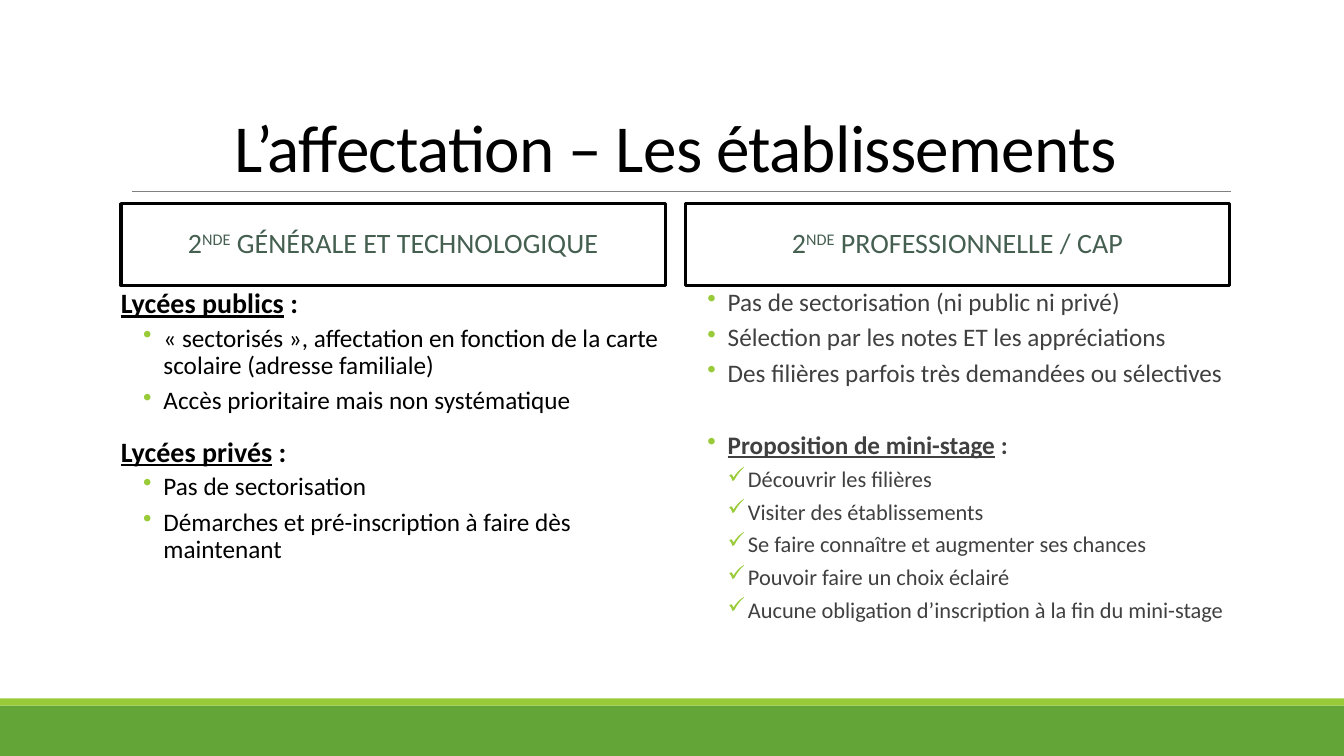
from lxml.etree import SubElement
from pptx import Presentation
from pptx.dml.color import RGBColor
from pptx.enum.shapes import MSO_CONNECTOR as Connector, MSO_SHAPE as Shape
from pptx.enum.text import MSO_ANCHOR as Anchor, PP_ALIGN as Align
from pptx.oxml.ns import qn
from pptx.util import Cm, Pt

BLACK = RGBColor(0x00, 0x00, 0x00)
CHARCOAL = RGBColor(0x40, 0x40, 0x40)
GREY = RGBColor(0x80, 0x80, 0x80)
PINE = RGBColor(0x45, 0x5F, 0x51)
GREEN = RGBColor(0x63, 0xA5, 0x37)
LIME = RGBColor(0x99, 0xCB, 0x38)

PAGE_WIDTH, PAGE_HEIGHT = 33.87, 19.05
LEFT, COLUMN_WIDTH, COLUMN_STEP = 3.05, 13.72, 14.22
HEADING_TOP, HEADING_HEIGHT = 5.13, 2.06
BODY_TOP, BODY_HEIGHT = 7.17, 9.37

LEVELS = {
    "title": dict(size=20, before=12, after=2),
    "dot": dict(size=18, before=2, after=4, bullet="•", margin=1.07),
    "check": dict(size=16, before=2, after=4, bullet="✓", margin=1.58),
}

COLUMNS = [
    (" GÉNÉRALE ET TECHNOLOGIQUE", BLACK, [
        ("title", "Lycées publics", " :"),
        ("dot", "« sectorisés », affectation en fonction de la carte scolaire (adresse familiale)"),
        ("dot", "Accès prioritaire mais non systématique"),
        ("title", "Lycées privés", " :"),
        ("dot", "Pas de sectorisation"),
        ("dot", "Démarches et pré-inscription à faire dès maintenant"),
    ]),
    (" PROFESSIONNELLE / CAP", CHARCOAL, [
        ("dot", "Pas de sectorisation (ni public ni privé)"),
        ("dot", "Sélection par les notes ET les appréciations"),
        ("dot", "Des filières parfois très demandées ou sélectives"),
        ("dot", "Proposition de mini-stage", " :"),
        ("check", "Découvrir les filières"),
        ("check", "Visiter des établissements"),
        ("check", "Se faire connaître et augmenter ses chances"),
        ("check", "Pouvoir faire un choix éclairé"),
        ("check", "Aucune obligation d’inscription à la fin du mini-stage"),
    ]),
]
MINI_STAGE_GAP = 28


class SlideBuilder:
    font = "Calibri"

    def __init__(self, page):
        self.page = page

    def rectangle(self, left, top, width, height, fill=None, line=None):
        box = self.page.shapes.add_shape(
            Shape.RECTANGLE, Cm(left), Cm(top), Cm(width), Cm(height))
        box.shadow.inherit = False
        if fill is None:
            box.fill.background()
        else:
            box.fill.solid()
            box.fill.fore_color.rgb = fill
        if line is None:
            box.line.fill.background()
        else:
            box.line.color.rgb = line
            box.line.width = Pt(2.25)
        return box

    def rule(self, left, right, top):
        line = self.page.shapes.add_connector(
            Connector.STRAIGHT, Cm(left), Cm(top), Cm(right), Cm(top))
        line.line.color.rgb = GREY
        line.line.width = Pt(0.5)
        SubElement(line._element.spPr, qn("a:effectLst"))

    def text_box(self, left, top, width, height):
        box = self.page.shapes.add_textbox(Cm(left), Cm(top), Cm(width), Cm(height))
        box.text_frame.word_wrap = True
        return box.text_frame

    def style(self, para, size, color, spacing=0.9):
        para.line_spacing = spacing
        para.font.name = self.font
        para.font.size = Pt(size)
        para.font.color.rgb = color

    def bullet(self, para, symbol, margin):
        properties = para._p.get_or_add_pPr()
        properties.set("marL", str(Cm(margin)))
        properties.set("indent", str(Cm(-0.51)))
        color = SubElement(properties, qn("a:buClr"))
        SubElement(color, qn("a:srgbClr"), val=str(LIME))
        SubElement(properties, qn("a:buChar"), char=symbol)

    def span(self, para, text, **attributes):
        span = para.add_run()
        span.text = text
        for name, value in attributes.items():
            span._r.get_or_add_rPr().set(name, value)
        return span

    def title(self, text):
        frame = self.text_box(LEFT, 0.79, 27.94, 4.04)
        frame.vertical_anchor = Anchor.BOTTOM
        para = frame.paragraphs[0]
        para.alignment = Align.CENTER
        self.style(para, 48, BLACK, 0.85)
        self.span(para, text, spc="-50")

    def heading(self, left, text):
        box = self.rectangle(left, HEADING_TOP, COLUMN_WIDTH, HEADING_HEIGHT, line=BLACK)
        frame = box.text_frame
        frame.word_wrap = True
        frame.vertical_anchor = Anchor.MIDDLE
        para = frame.paragraphs[0]
        para.alignment = Align.CENTER
        self.style(para, 20, PINE)
        self.span(para, "2")
        self.span(para, "NDE", baseline="30000")
        self.span(para, text)

    def body(self, left, color, items):
        frame = self.text_box(left, BODY_TOP, COLUMN_WIDTH, BODY_HEIGHT)
        frame.margin_left = frame.margin_right = 0
        for index, (kind, text, *ending) in enumerate(items):
            level = LEVELS[kind]
            para = frame.add_paragraph() if index else frame.paragraphs[0]
            if "bullet" in level:
                self.bullet(para, level["bullet"], level["margin"])
            before = MINI_STAGE_GAP if kind == "dot" and ending else level["before"]
            para.space_before = Pt(before if index else 0)
            para.space_after = Pt(level["after"])
            self.style(para, level["size"], color)
            para.font.bold = bool(ending)
            lead = self.span(para, text)
            if ending:
                lead.font.underline = True
                self.span(para, ending[0])


def main():
    deck = Presentation()
    deck.slide_width, deck.slide_height = Cm(PAGE_WIDTH), Cm(PAGE_HEIGHT)
    builder = SlideBuilder(deck.slides.add_slide(deck.slide_layouts[6]))
    builder.rectangle(0, 17.78, PAGE_WIDTH, 1.27, fill=GREEN)
    builder.rectangle(0, 17.6, PAGE_WIDTH, 0.18, fill=LIME)
    builder.rule(3.33, 31.01, 4.83)
    builder.title("L’affectation – Les établissements")
    for index, (heading, color, items) in enumerate(COLUMNS):
        left = LEFT + index * COLUMN_STEP
        builder.heading(left, heading)
        builder.body(left, color, items)
    deck.save("out.pptx")


if __name__ == "__main__":
    main()
